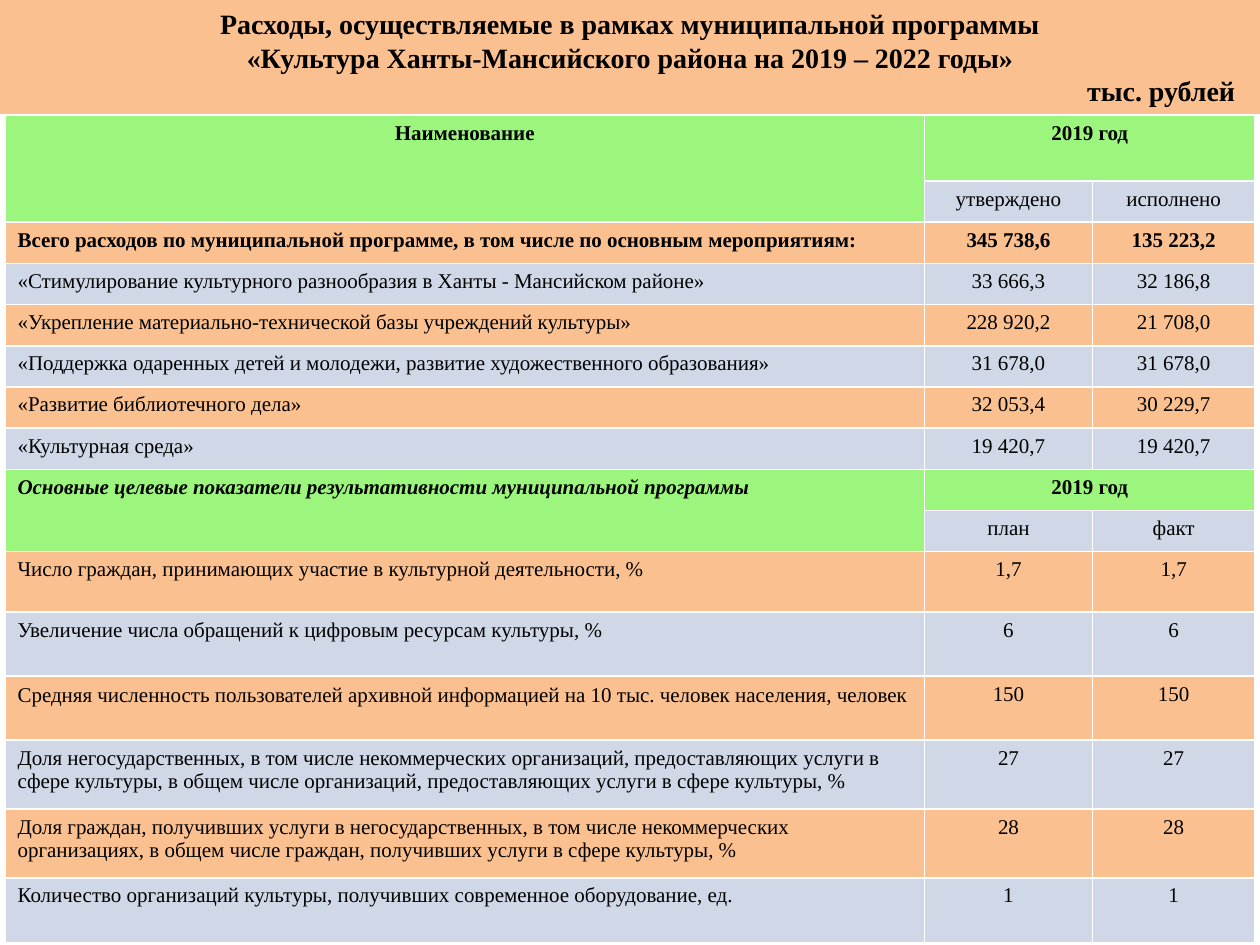
from dataclasses import dataclass

from pptx import Presentation
from pptx.dml.color import RGBColor
from pptx.enum.shapes import MSO_SHAPE as Shape
from pptx.enum.text import MSO_ANCHOR as Anchor, PP_ALIGN as Align
from pptx.util import Cm, Pt


@dataclass(frozen=True)
class Theme:
    font: str = "Times New Roman"
    text: RGBColor = RGBColor(0x00, 0x00, 0x00)
    header: RGBColor = RGBColor(0x9C, 0xF5, 0x7D)
    orange: RGBColor = RGBColor(0xFA, 0xC0, 0x90)
    blue: RGBColor = RGBColor(0xD0, 0xD8, 0xE8)
    title_size: Pt = Pt(16)
    table_size: Pt = Pt(12)


THEME = Theme()

TITLE_LINES = [
    ("Расходы, осуществляемые в рамках муниципальной программы", Align.CENTER),
    ("«Культура Ханты-Мансийского района на 2019 – 2022 годы»", Align.CENTER),
    ("тыс. рублей", Align.RIGHT),
]

EXPENSES_HEADER, TOTAL, TARGETS_HEADER, ARCHIVE_USERS = 0, 2, 8, 12
HEADERS = (EXPENSES_HEADER, TARGETS_HEADER)
COLUMN_WIDTHS = [18.54, 3.38, 3.28]
ROW_HEIGHTS = [1.32] + [0.83] * 9 + [1.22, 1.29, 1.29, 1.39, 1.39, 1.31]
ROWS = [
    ("Наименование", "2019 год", ""),
    ("", "утверждено", "исполнено"),
    ("Всего расходов по муниципальной программе, в том числе по основным мероприятиям:",
     "345 738,6", "135 223,2"),
    ("«Стимулирование культурного разнообразия в Ханты - Мансийском районе»",
     "33 666,3", "32 186,8"),
    ("«Укрепление материально-технической базы учреждений культуры»",
     "228 920,2", "21 708,0"),
    ("«Поддержка одаренных детей и молодежи, развитие художественного образования»",
     "31 678,0", "31 678,0"),
    ("«Развитие библиотечного дела»", "32 053,4", "30 229,7"),
    ("«Культурная среда»", "19 420,7", "19 420,7"),
    ("Основные целевые показатели результативности муниципальной программы",
     "2019 год", ""),
    ("", "план", "факт"),
    ("Число граждан, принимающих участие в культурной деятельности, %", "1,7", "1,7"),
    ("Увеличение числа обращений к цифровым ресурсам культуры, %", "6", "6"),
    ("Средняя численность пользователей архивной информацией на 10 тыс. человек "
     "населения, человек", "150", "150"),
    ("Доля негосударственных, в том числе некоммерческих организаций, предоставляющих "
     "услуги в сфере культуры, в общем числе организаций, предоставляющих услуги "
     "в сфере культуры, %", "27", "27"),
    ("Доля граждан, получивших услуги в негосударственных, в том числе некоммерческих "
     "организациях, в общем числе граждан, получивших услуги в сфере культуры, %",
     "28", "28"),
    ("Количество организаций культуры, получивших современное оборудование, ед.",
     "1", "1"),
]


def add_run(paragraph, text, size, bold=False, italic=False):
    run = paragraph.add_run()
    run.text = text
    run.font.name = THEME.font
    run.font.size = size
    run.font.bold = bold
    run.font.italic = italic
    run.font.color.rgb = THEME.text


def add_title(slide):
    shape = slide.shapes.add_shape(Shape.RECTANGLE, 0, 0, Cm(25.4), Cm(2.3))
    shape.shadow.inherit = False
    shape.fill.solid()
    shape.fill.fore_color.rgb = THEME.orange
    shape.line.fill.background()
    frame = shape.text_frame
    frame.word_wrap = True
    frame.vertical_anchor = Anchor.MIDDLE
    frame.margin_left = frame.margin_right = Cm(0.5)
    for index, (text, alignment) in enumerate(TITLE_LINES):
        paragraph = frame.add_paragraph() if index else frame.paragraphs[0]
        paragraph.alignment = alignment
        add_run(paragraph, text, THEME.title_size, bold=True)


def row_color(row, column):
    if row in HEADERS or (column == 0 and row - 1 in HEADERS):
        return THEME.header
    return THEME.blue if row % 2 else THEME.orange


def fill_cell(cell, row, column, text):
    cell.fill.solid()
    cell.fill.fore_color.rgb = row_color(row, column)
    if not text:
        return
    paragraph = cell.text_frame.paragraphs[0]
    centered = column > 0 or row == EXPENSES_HEADER
    paragraph.alignment = Align.CENTER if centered else Align.LEFT
    if row == ARCHIVE_USERS and column == 0:
        paragraph.line_spacing = 1.07
    add_run(paragraph, text, THEME.table_size,
            bold=row in HEADERS or row == TOTAL,
            italic=row == TARGETS_HEADER and column == 0)


def add_budget_table(slide):
    frame = slide.shapes.add_table(
        len(ROWS), len(COLUMN_WIDTHS), Cm(0.1), Cm(2.33),
        Cm(sum(COLUMN_WIDTHS)), Cm(sum(ROW_HEIGHTS)))
    table = frame.table
    table.horz_banding = False
    for column, width in zip(table.columns, COLUMN_WIDTHS):
        column.width = Cm(width)
    for row, height in zip(table.rows, ROW_HEIGHTS):
        row.height = Cm(height)
    for row, texts in enumerate(ROWS):
        for column, text in enumerate(texts):
            fill_cell(table.cell(row, column), row, column, text)
    for row in HEADERS:
        table.cell(row, 0).merge(table.cell(row + 1, 0))
        table.cell(row, 1).merge(table.cell(row, 2))


def main():
    presentation = Presentation()
    presentation.slide_width = Cm(25.4)
    presentation.slide_height = Cm(19.05)
    slide = presentation.slides.add_slide(presentation.slide_layouts[6])
    add_title(slide)
    add_budget_table(slide)
    presentation.save("out.pptx")


if __name__ == "__main__":
    main()
